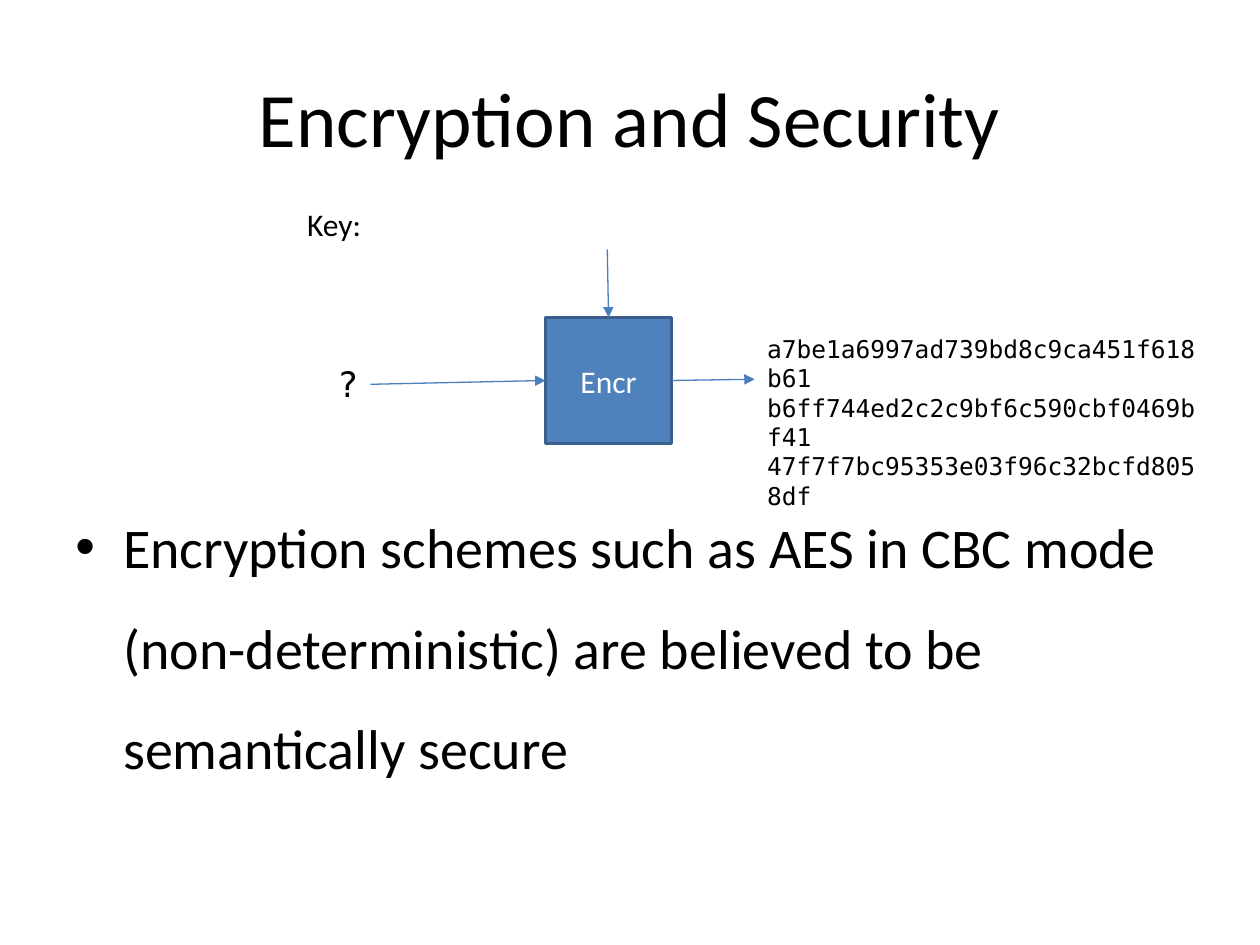
from lxml.etree import SubElement
from pptx import Presentation
from pptx.dml.color import RGBColor
from pptx.enum.shapes import MSO_CONNECTOR, MSO_SHAPE
from pptx.enum.text import MSO_ANCHOR, PP_ALIGN
from pptx.oxml.ns import qn
from pptx.util import Inches, Pt

MONO = "DejaVu Sans Mono"

deck = Presentation()
deck.slide_width, deck.slide_height = Inches(10), Inches(7.5)
page = deck.slides.add_slide(deck.slide_layouts[6])
column = deck.slide_width / 10
row = deck.slide_height / 7.5


def grid(*cells):
    """Turn alternating column and row counts into lengths."""
    return [round(cell * (row if index % 2 else column)) for index, cell in enumerate(cells)]


def write(shape, lines, size, name="Calibri", color="000000", align=PP_ALIGN.LEFT,
          anchor=MSO_ANCHOR.TOP, wrap=True):
    frame = shape.text_frame
    frame.word_wrap = wrap
    frame.vertical_anchor = anchor
    frame.text = "\n".join(lines)
    for para in frame.paragraphs:
        para.alignment = align
        font = para.runs[0].font
        for key, value in {"size": Pt(size), "name": name}.items():
            setattr(font, key, value)
        font.color.rgb = RGBColor.from_string(color)


centred = {"align": PP_ALIGN.CENTER, "anchor": MSO_ANCHOR.MIDDLE}
ciphertexts = [
    "a7be1a6997ad739bd8c9ca451f618b61",
    "b6ff744ed2c2c9bf6c590cbf0469bf41",
    "47f7f7bc95353e03f96c32bcfd8058df",
]
statement = ("Encryption schemes such as AES in CBC mode (non-deterministic) "
             "are believed to be semantically secure")

# Encryption box
left, top, side = 4.33, 2.52, 1
right, middle = left + side, top + side / 2
cipher = page.shapes.add_shape(MSO_SHAPE.RECTANGLE, *grid(left, top, side, side))
cipher.shadow.inherit = False
cipher.fill.solid()
cipher.fill.fore_color.rgb = RGBColor.from_string("4F81BD")
cipher.line.color.rgb = RGBColor.from_string("3A5F8C")
cipher.line.width = Pt(2)
write(cipher, ["Encr"], 18, color="FFFFFF", **centred)

# Key, message and ciphertext arrows
arrows = [
    (4.82, 1.98, left + side / 2, top),
    (2.94, 3.05, left, middle),
    (right, middle, 5.99, 3.01),
]
for ends in arrows:
    arrow = page.shapes.add_connector(MSO_CONNECTOR.STRAIGHT, *grid(*ends))
    arrow.line.color.rgb = RGBColor.from_string("4B7EBC")
    arrow.line.width = Pt(0.75)
    SubElement(arrow.line._get_or_add_ln(), qn("a:tailEnd"), type="triangle")
    SubElement(arrow._element.spPr, qn("a:effectLst"))

# Title, labels and statement
texts = [
    ((0.5, 0.3, 9, 1.25), ["Encryption and Security"], 44, centred),
    ((2.34, 1.58, 0.64, 0.4), ["Key:"], 18, {"wrap": False}),
    ((2.58, 2.83, 0.36, 0.44), ["?"], 20, {"name": MONO, "wrap": False}),
    ((5.99, 2.6, 3.68, 0.81), ciphertexts, 14, {"name": MONO}),
    ((0.5, 3.75, 9, 2.95), [statement], 32, {}),
]
for place, lines, size, style in texts:
    box = page.shapes.add_textbox(*grid(*place))
    write(box, lines, size, **style)

# The statement, placed last, is a bullet point
para = box.text_frame.paragraphs[0]
for key, value in {"line_spacing": 1.5, "space_before": Pt(6.4)}.items():
    setattr(para, key, value)
properties = para._p.get_or_add_pPr()
indent = round(0.38 * column)
properties.set("marL", str(indent))
properties.set("indent", str(-indent))
SubElement(properties, qn("a:buFont"), typeface="Arial")
SubElement(properties, qn("a:buChar"), char="•")

deck.save("out.pptx")
